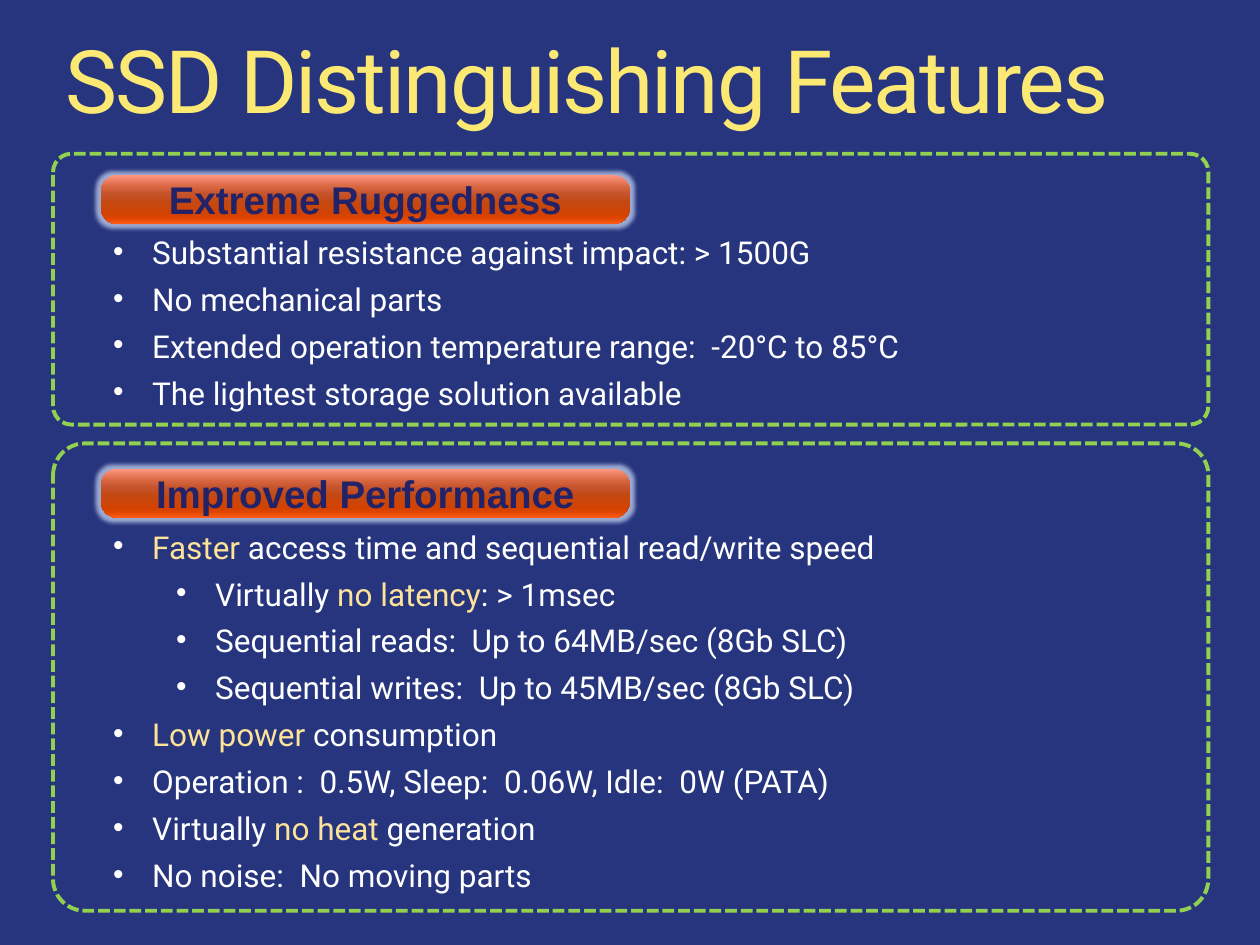
from lxml import etree
from pptx import Presentation
from pptx.dml.color import RGBColor
from pptx.enum.dml import MSO_LINE
from pptx.enum.shapes import MSO_SHAPE
from pptx.enum.text import MSO_ANCHOR, PP_ALIGN
from pptx.oxml.ns import qn
from pptx.util import Cm, Pt

ROUNDED = MSO_SHAPE.ROUNDED_RECTANGLE
SHORT_DASH = MSO_LINE.SQUARE_DOT
MIDDLE = MSO_ANCHOR.MIDDLE
CENTER = PP_ALIGN.CENTER

COLORS = {
    "background": "26357E",
    "title": "FCE974",
    "frame": "92D050",
    "label": "222268",
    "body": "FFFFFF",
    "accent": "FDE399",
    "glow": "C5D3F0",
}
LABEL_STOPS = {0: "FF9782", 25: "D6643E", 38: "C5532C", 55: "C44911",
               80: "D34200", 88: "DE4500", 100: "FF5C16"}

TITLE_FONT = {"name": "Roboto", "size": Pt(50)}
LABEL_FONT = {"name": "Arial", "size": Pt(22), "bold": True}
BODY_FONT = {"name": "Roboto", "size": Pt(18)}

FRAME_LEFT, FRAME_WIDTH = 1.07, 23.29
CONTENT_LEFT = 2.03
LABEL_WIDTH, LABEL_HEIGHT = 10.67, 0.99
INDENT, LEVEL_STEP = 0.79, 1.27

# Each item is (level, text); asterisks enclose the accented words.
PANELS = [
    {
        "heading": "Extreme Ruggedness",
        "frame": (3.1, 5.46), "label_top": 3.53, "list": (4.78, 22.3, 4.04),
        "items": [
            (0, "Substantial resistance against impact: > 1500G"),
            (0, "No mechanical parts"),
            (0, "Extended operation temperature range:  -20°C to 85°C"),
            (0, "The lightest storage solution available"),
        ],
    },
    {
        "heading": "Improved Performance",
        "frame": (8.94, 9.42), "label_top": 9.45, "list": (10.72, 23.27, 8.08),
        "items": [
            (0, "*Faster* access time and sequential read/write speed"),
            (1, "Virtually *no latency*: > 1msec"),
            (1, "Sequential reads:  Up to 64MB/sec (8Gb SLC)"),
            (1, "Sequential writes:  Up to 45MB/sec (8Gb SLC)"),
            (0, "*Low power* consumption"),
            (0, "Operation :  0.5W, Sleep:  0.06W, Idle:  0W (PATA)"),
            (0, "Virtually *no heat* generation"),
            (0, "No noise:  No moving parts"),
        ],
    },
]


def color(name):
    return RGBColor.from_string(COLORS[name])


def add_node(parent, tag, **attributes):
    return etree.SubElement(parent, qn(tag), attributes)


def add_run(paragraph, text, font_format, color_name):
    run = paragraph.add_run()
    run.text = text
    for attribute, value in font_format.items():
        setattr(run.font, attribute, value)
    run.font.color.rgb = color(color_name)
    return run


def add_text_frame(slide, left, top, width, height):
    box = slide.shapes.add_textbox(Cm(left), Cm(top), Cm(width), Cm(height))
    box.text_frame.word_wrap = True
    return box.text_frame


def add_rounded(slide, left, top, width, height, corner):
    shape = slide.shapes.add_shape(ROUNDED, Cm(left), Cm(top), Cm(width), Cm(height))
    shape.adjustments[0] = corner
    shape.shadow.inherit = False
    return shape


def add_title(slide, text):
    paragraph = add_text_frame(slide, 1.07, 0.64, 23.27, 1.93).paragraphs[0]
    paragraph.line_spacing = 0.9
    run = add_run(paragraph, text, TITLE_FONT, "title")
    run.font._element.set("spc", "-120")


def add_frame(slide, top, height):
    frame = add_rounded(slide, FRAME_LEFT, top, FRAME_WIDTH, height, 0.068)
    frame.fill.background()
    frame.line.color.rgb = color("frame")
    frame.line.width = Pt(2.25)
    frame.line.dash_style = SHORT_DASH


def add_label(slide, top, text):
    label = add_rounded(slide, CONTENT_LEFT, top, LABEL_WIDTH, LABEL_HEIGHT, 0.342)
    label.line.fill.background()

    # Gradient from top to bottom
    label.fill.gradient()
    label.fill.gradient_angle = 270
    properties = label._element.spPr
    stops = properties.find(".//" + qn("a:gsLst"))
    for stop in list(stops):
        stops.remove(stop)
    for position, value in LABEL_STOPS.items():
        stop = add_node(stops, "a:gs", pos=str(position * 1000))
        add_node(stop, "a:srgbClr", val=value)

    # Soft glow around the label
    glow = add_node(properties.find(qn("a:effectLst")), "a:glow", rad=str(Pt(5)))
    glow_color = add_node(glow, "a:srgbClr", val=COLORS["glow"])
    add_node(glow_color, "a:alpha", val="75000")

    label.text_frame.word_wrap = False
    label.text_frame.vertical_anchor = MIDDLE
    paragraph = label.text_frame.paragraphs[0]
    paragraph.alignment = CENTER
    add_run(paragraph, text, LABEL_FONT, "label")


def set_bullet(paragraph, level):
    properties = paragraph._p.get_or_add_pPr()
    properties.set("marL", str(Cm(INDENT + level * LEVEL_STEP)))
    properties.set("indent", str(-Cm(INDENT)))
    bullet_color = add_node(properties, "a:buClr")
    add_node(bullet_color, "a:srgbClr", val=COLORS["body"])
    add_node(properties, "a:buSzPct", val="95000")
    add_node(properties, "a:buFont", typeface="Arial")
    add_node(properties, "a:buChar", char="•")


def add_bullet_list(slide, top, width, height, items):
    text_frame = add_text_frame(slide, CONTENT_LEFT, top, width, height)
    for index, (level, text) in enumerate(items):
        paragraph = text_frame.add_paragraph() if index else text_frame.paragraphs[0]
        paragraph.level = level
        paragraph.line_spacing = 0.7
        paragraph.space_before = Pt(11.7 if index else 0)
        set_bullet(paragraph, level)
        for part, words in enumerate(text.split("*")):
            if words:
                add_run(paragraph, words, BODY_FONT, "accent" if part % 2 else "body")


def main():
    presentation = Presentation()
    presentation.slide_width, presentation.slide_height = Cm(25.4), Cm(19.05)
    slide = presentation.slides.add_slide(presentation.slide_layouts[6])
    slide.background.fill.solid()
    slide.background.fill.fore_color.rgb = color("background")

    add_title(slide, "SSD Distinguishing Features")
    for panel in PANELS:
        add_label(slide, panel["label_top"], panel["heading"])
        add_frame(slide, *panel["frame"])
        add_bullet_list(slide, *panel["list"], panel["items"])

    presentation.save("out.pptx")


if __name__ == "__main__":
    main()
